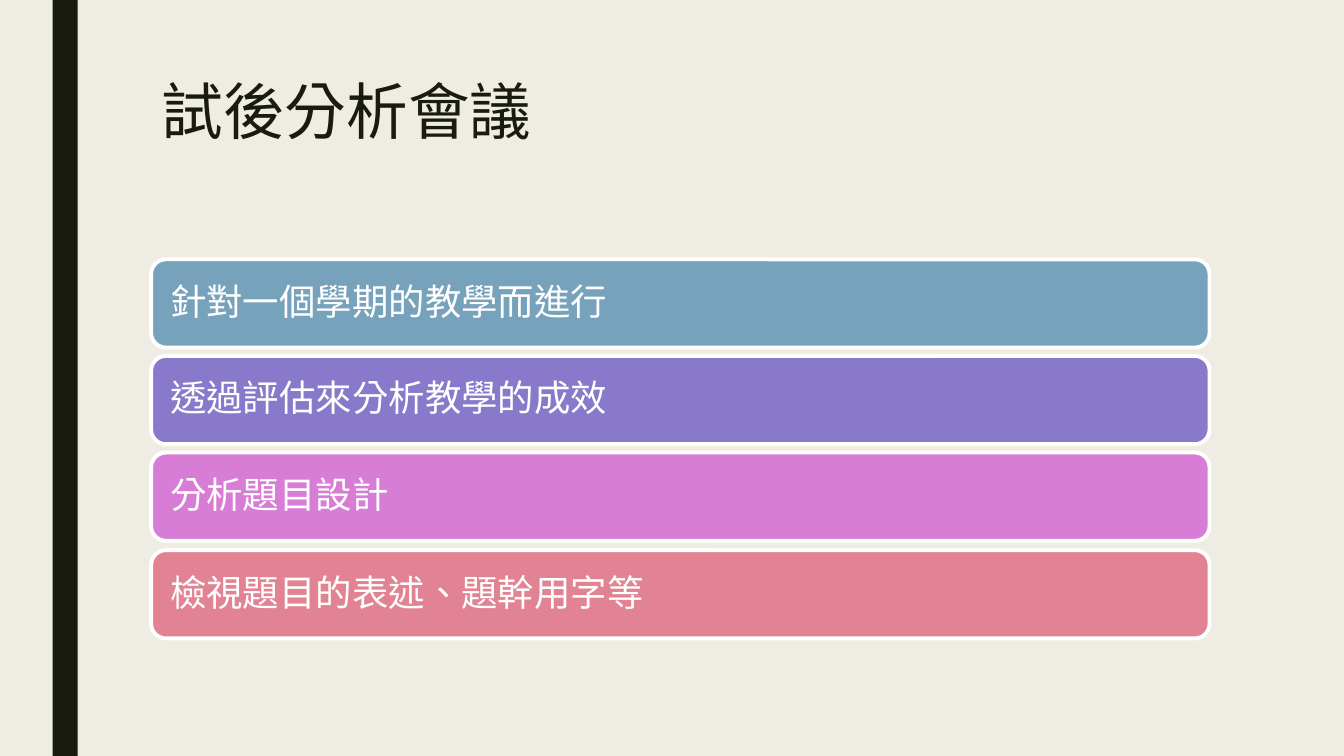
from pptx import Presentation
from pptx.dml.color import RGBColor
from pptx.enum.lang import MSO_LANGUAGE_ID
from pptx.enum.shapes import MSO_SHAPE
from pptx.enum.text import MSO_ANCHOR, MSO_AUTO_SIZE, PP_ALIGN
from pptx.util import Pt

PX = 9525  # EMU in one px, 96 px to the inch
RECT, ROUND = MSO_SHAPE.RECTANGLE, MSO_SHAPE.ROUNDED_RECTANGLE
TOP, MIDDLE = MSO_ANCHOR.TOP, MSO_ANCHOR.MIDDLE
LEFT = PP_ALIGN.LEFT
NO_FIT = MSO_AUTO_SIZE.NONE
CHINESE = MSO_LANGUAGE_ID.TRADITIONAL_CHINESE

CREAM = RGBColor(0xEF, 0xED, 0xE3)
INK = RGBColor(0x19, 0x1B, 0x0E)
WHITE = RGBColor(0xFF, 0xFF, 0xFF)
BLUE = RGBColor(0x77, 0xA2, 0xBB)
PURPLE = RGBColor(0x88, 0x79, 0xCA)
ORCHID = RGBColor(0xD7, 0x7D, 0xD6)
ROSE = RGBColor(0xE2, 0x83, 0x94)

POINTS = [
    ("針對一個學期的教學而進行", BLUE),
    ("透過評估來分析教學的成效", PURPLE),
    ("分析題目設計", ORCHID),
    ("檢視題目的表述、題幹用字等", ROSE),
]


def assign(target, values):
    for name, value in values.items():
        setattr(target, name, value)


class Deck:
    font = "Lato"

    def __init__(self, wide, high):
        self.show = Presentation()
        assign(self.show, {"slide_width": wide * PX, "slide_height": high * PX})
        self.slide = self.show.slides.add_slide(self.show.slide_layouts[5])
        fill = self.slide.background.fill
        fill.solid()
        fill.fore_color.rgb = CREAM

    def label(self, shape, text, size, color, anchor, pad_x, pad_y):
        frame = shape.text_frame
        assign(frame, {
            "word_wrap": True, "auto_size": NO_FIT, "vertical_anchor": anchor,
            "margin_left": pad_x * PX, "margin_right": pad_x * PX,
            "margin_top": pad_y * PX, "margin_bottom": pad_y * PX,
        })
        para = frame.paragraphs[0]
        assign(para, {"alignment": LEFT, "line_spacing": 0.9})
        run = para.add_run()
        run.text = text
        assign(run.font, {"name": self.font, "size": Pt(size),
                          "language_id": CHINESE})
        run.font.color.rgb = color

    def title(self, text, x, y, w, h):
        shape = self.slide.shapes.title
        assign(shape, {"left": x * PX, "top": y * PX,
                       "width": w * PX, "height": h * PX})
        self.label(shape, text, 44, INK, TOP, 10, 5)

    def block(self, kind, x, y, w, h, color):
        shape = self.slide.shapes.add_shape(kind, x * PX, y * PX, w * PX, h * PX)
        shape.shadow.inherit = False
        shape.fill.solid()
        shape.fill.fore_color.rgb = color
        shape.line.fill.background()
        return shape

    def bar(self, text, x, y, w, h, color):
        shape = self.block(ROUND, x, y, w, h, color)
        shape.line.color.rgb = WHITE
        shape.line.width = Pt(2.75)
        self.label(shape, text, 26, WHITE, MIDDLE, 14, 10)


def main():
    deck = Deck(1280, 720)

    # Side stripe and title
    deck.block(RECT, 50, 0, 24, 720, INK)
    deck.title("試後分析會議", 144, 72, 1008, 156)

    # Stack of bars, spread evenly from the first top to the last
    first, last = 247, 524
    for i, (text, color) in enumerate(POINTS):
        top = first + (last - first) * i // (len(POINTS) - 1)
        deck.bar(text, 144, top, 1008, 84, color)

    deck.show.save("out.pptx")


if __name__ == "__main__":
    main()
